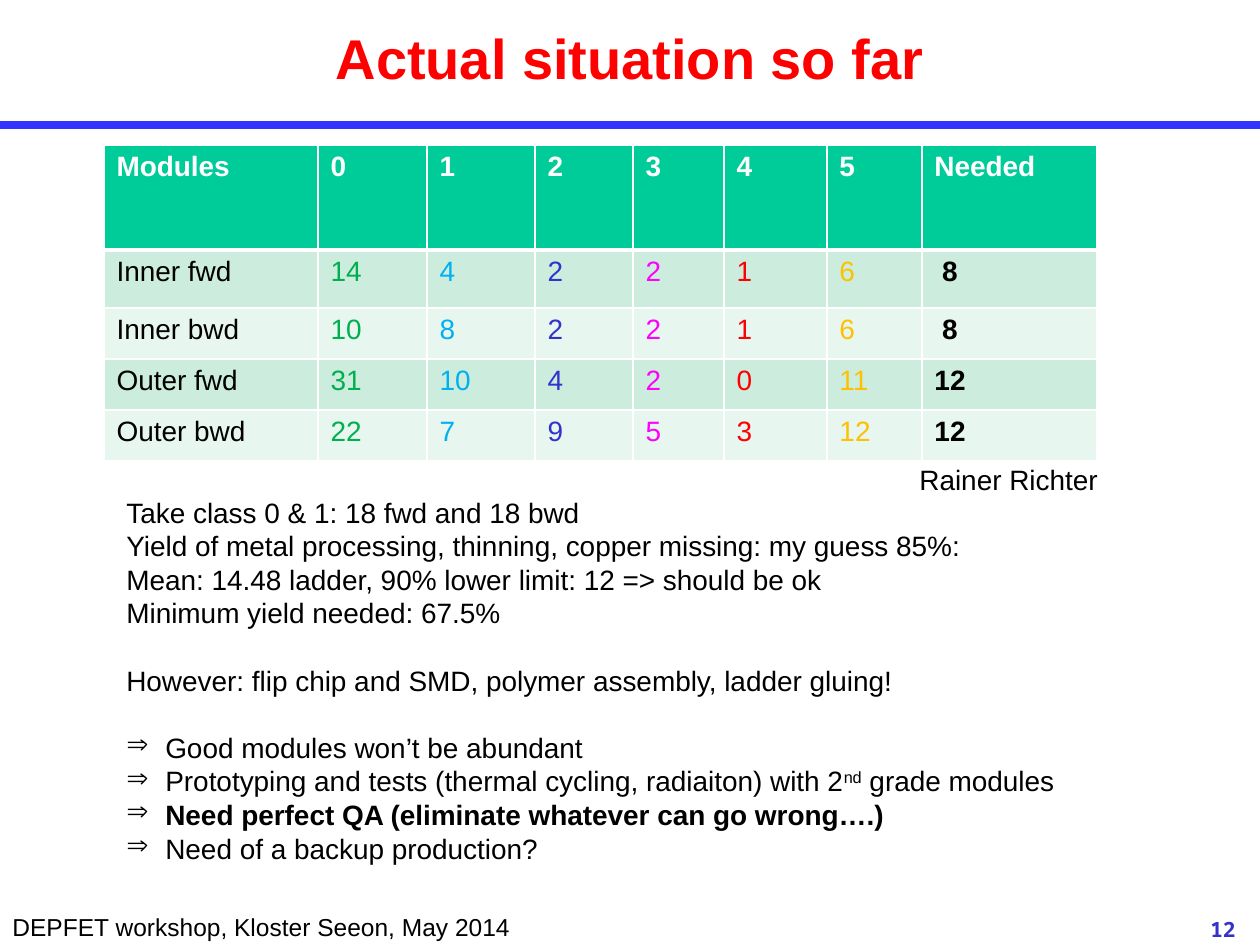
from lxml import etree
from pptx import Presentation, util as u
from pptx.dml.color import RGBColor
from pptx.enum import shapes, text
from pptx.oxml import ns

COLORS = {
    "black": "000000", "white": "FFFFFF", "red": "FF0000", "rule": "3333FF",
    "blue": "3333CC", "green": "00B050", "sky": "00B0F0", "magenta": "FF00FF",
    "amber": "FFC000", "header": "00CC99", "odd": "CCECDE", "even": "E7F6EF",
}
TITLE = "Actual situation so far"
FOOTER = "DEPFET workshop, Kloster Seeon, May 2014"
MODULES = [
    ("Modules", "0", "1", "2", "3", "4", "5", "Needed"),
    ("Inner fwd", "14", "4", "2", "2", "1", "6", " 8"),
    ("Inner bwd", "10", "8", "2", "2", "1", "6", " 8"),
    ("Outer fwd", "31", "10", "4", "2", "0", "11", "12"),
    ("Outer bwd", "22", "7", "9", "5", "3", "12", "12"),
]
COLUMN_COLORS = ["black", "green", "sky", "blue", "magenta", "red", "amber", "black"]
COLUMN_WIDTHS = [214, 109, 108, 98, 91, 103, 95, 175]
ROW_HEIGHTS = [105, 58, 51, 51, 51]

# Groups of lines, one blank line apart; each line is a list of (text, style).
STATEMENTS = [
    [[("Take class 0 & 1: 18 fwd and 18 bwd", "")],
     [("Yield of metal processing, thinning, copper missing: my guess 85%:", "")],
     [("Mean: 14.48 ladder, 90% lower limit: 12 => should be ok", "")],
     [("Minimum yield needed: 67.5%", "")]],
    [[("However: flip chip and SMD, polymer assembly, ladder gluing!", "")]],
]
CONCLUSIONS = [
    [("Good modules won’t be abundant", "")],
    [("Prototyping and tests (thermal cycling, radiaiton) with 2", ""),
     ("nd", "super"), (" grade modules", "")],
    [("Need perfect QA (eliminate whatever can go wrong….)", "bold")],
    [("Need of a backup production?", "")],
]
LINE_PITCH = u.Pt(19.2)


def px(length):
    return round(length * 914400 / 126)


def color(name):
    return RGBColor.from_string(COLORS[name])


def add_span(para, words, size=16, ink="black", bold=False, face="Arial"):
    span = para.add_run()
    span.text = words
    span.font.name, span.font.size, span.font.bold = face, u.Pt(size), bold
    span.font.color.rgb = color(ink)
    return span


def add_box(page, left, top, width, height):
    frame = page.shapes.add_textbox(px(left), px(top), px(width), px(height)).text_frame
    frame.word_wrap = True
    return frame


def set_bullet(para, char, indent):
    props = para._p.get_or_add_pPr()
    props.set("marL", str(px(indent)))
    props.set("indent", str(-px(indent)))
    etree.SubElement(props, ns.qn("a:buChar"), char=char)


def set_borders(cell, bottom):
    props = cell._tc.get_or_add_tcPr()
    for side, points in (("L", 1), ("R", 1), ("T", 1), ("B", bottom)):
        line = etree.SubElement(props, ns.qn(f"a:ln{side}"), w=str(u.Pt(points)))
        fill = etree.SubElement(line, ns.qn("a:solidFill"))
        etree.SubElement(fill, ns.qn("a:srgbClr"), val=COLORS["white"])


def add_rule(page):
    rule = page.shapes.add_connector(
        shapes.MSO_CONNECTOR.STRAIGHT, 0, px(125), px(1260), px(125))
    rule.line.color.rgb = color("rule")
    rule.line.width = u.Pt(4.5)
    etree.SubElement(rule._element.spPr, ns.qn("a:effectLst"))


def add_title(page):
    title = page.shapes.title
    title.left, title.top, title.width, title.height = 0, 0, px(1260), px(115)
    title.text_frame.vertical_anchor = text.MSO_ANCHOR.MIDDLE
    para = title.text_frame.paragraphs[0]
    para.alignment = text.PP_ALIGN.CENTER
    add_span(para, TITLE, 32, "red", True)


def add_modules(page):
    table = page.shapes.add_table(
        len(MODULES), len(COLUMN_WIDTHS), px(104), px(145),
        px(sum(COLUMN_WIDTHS)), px(sum(ROW_HEIGHTS))).table
    for column, width in zip(table.columns, COLUMN_WIDTHS):
        column.width = px(width)
    for row, height in zip(table.rows, ROW_HEIGHTS):
        row.height = px(height)
    for r, values in enumerate(MODULES):
        for c, value in enumerate(values):
            cell, head = table.cell(r, c), r == 0
            set_borders(cell, 3 if head else 1)
            cell.fill.solid()
            cell.fill.fore_color.rgb = color("header" if head else "odd" if r % 2 else "even")
            add_span(cell.text_frame.paragraphs[0], value,
                     ink="white" if head else COLUMN_COLORS[c],
                     bold=head or c == len(values) - 1)


def add_body(page):
    frame = add_box(page, 114, 489, 968, 420)
    groups = STATEMENTS + [CONCLUSIONS]
    for g, group in enumerate(groups):
        for n, line in enumerate(group):
            first = g == n == 0
            para = frame.paragraphs[0] if first else frame.add_paragraph()
            para.line_spacing = LINE_PITCH
            para.space_before = LINE_PITCH if g and n == 0 else u.Pt(0)
            if group is CONCLUSIONS:
                set_bullet(para, "⇒", 39)
            for words, style in line:
                span = add_span(para, words, bold=style == "bold")
                if style == "super":
                    span.font._element.set("baseline", "30000")


def main():
    deck = Presentation()
    deck.slide_width, deck.slide_height = px(1260), px(945)
    page = deck.slides.add_slide(deck.slide_layouts[5])
    add_rule(page)
    add_title(page)
    add_span(add_box(page, 0, 906, 525, 43).paragraphs[0], FOOTER, 14)
    number = add_box(page, 1186, 910, 74, 35).paragraphs[0]
    number.alignment = text.PP_ALIGN.CENTER
    add_span(number, "12", 12, "blue", True, "Noto Sans Mono")
    add_modules(page)
    add_body(page)
    add_span(add_box(page, 907, 456, 273, 47).paragraphs[0], "Rainer Richter")
    deck.save("out.pptx")


if __name__ == "__main__":
    main()
